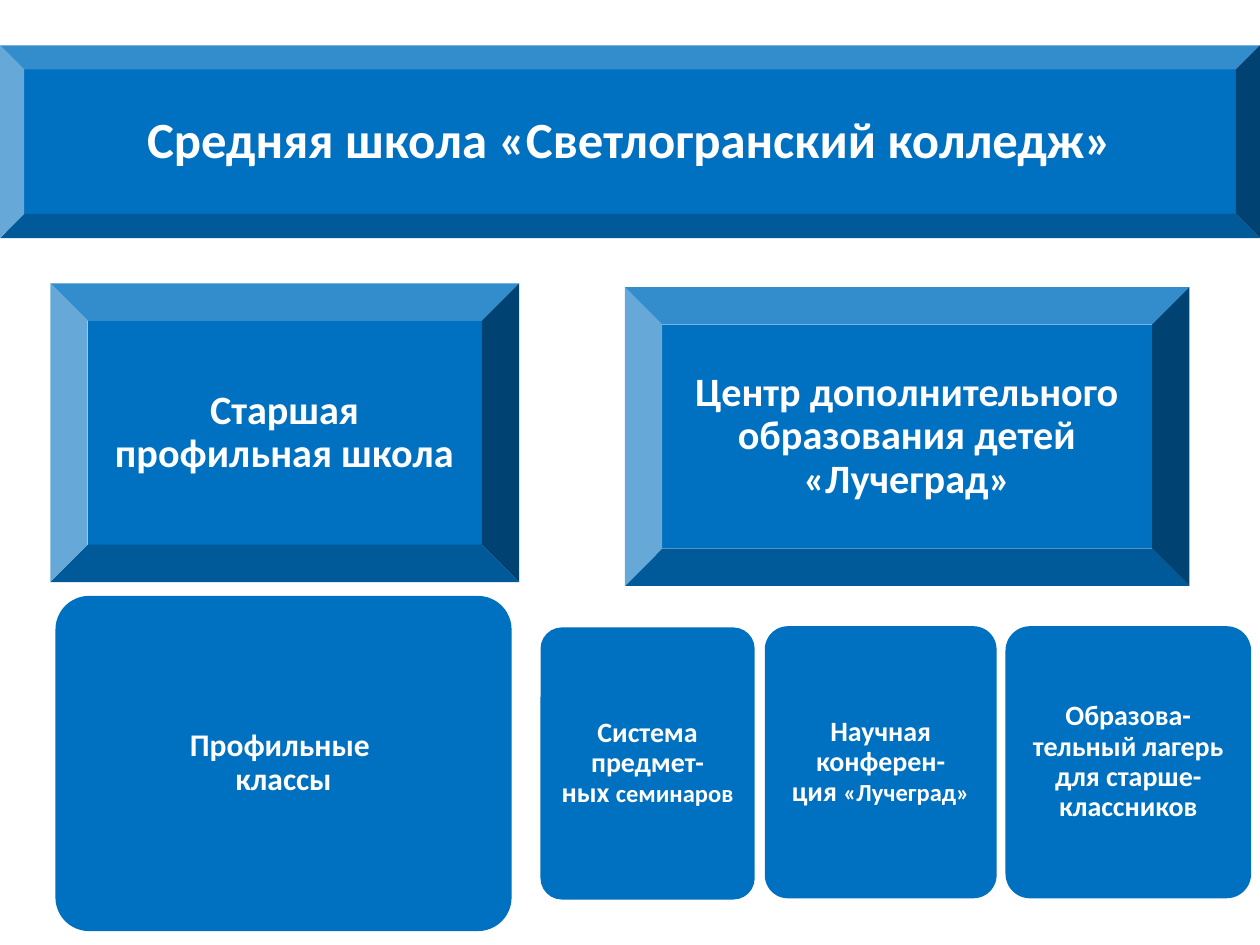
from typing import NamedTuple

import pptx
import pptx.dml.color
import pptx.enum.shapes
import pptx.enum.text
import pptx.util

Inches = pptx.util.Inches
Pt = pptx.util.Pt
MSO_SHAPE = pptx.enum.shapes.MSO_SHAPE
COLORS = {"block": "0070C0", "text": "FFFFFF"}
FONT = "Calibri"
SMALL_SIZE = 14


class Line(NamedTuple):
    text: str
    small: str = ""


class Block(NamedTuple):
    left: float
    top: float
    width: float
    height: float
    size: int
    inset: float
    lines: list[Line]


def rgb(name: str) -> pptx.dml.color.RGBColor:
    return pptx.dml.color.RGBColor.from_string(COLORS[name])


def add_line(p, line: Line, size: int) -> None:
    p.alignment = pptx.enum.text.PP_ALIGN.CENTER
    p.line_spacing = 0.9
    p.font.name = FONT
    p.font.size = Pt(size)
    p.font.bold = True
    p.font.color.rgb = rgb("text")
    p.add_run().text = line.text
    if line.small:
        r = p.add_run()
        r.text = line.small
        r.font.size = Pt(SMALL_SIZE)


def add_block(s, block: Block, kind: MSO_SHAPE, adjustment: float) -> None:
    box = (block.left, block.top, block.width, block.height)
    sp = s.shapes.add_shape(kind, *map(Inches, box))
    sp.adjustments[0] = adjustment
    sp.shadow.inherit = False
    sp.fill.solid()
    sp.fill.fore_color.rgb = rgb("block")
    sp.line.fill.background()
    tf = sp.text_frame
    tf.word_wrap = True
    tf.vertical_anchor = pptx.enum.text.MSO_ANCHOR.MIDDLE
    tf.margin_left = tf.margin_right = Inches(block.inset)
    tf.margin_top = tf.margin_bottom = Inches(block.inset)
    for i, line in enumerate(block.lines):
        p = tf.add_paragraph() if i else tf.paragraphs[0]
        add_line(p, line, block.size)


HEADINGS = [
    Block(0, 0.36, 10, 1.53, 29, 0.12,
          [Line("Средняя школа «Светлогранский колледж»")]),
    Block(0.4, 2.25, 3.72, 2.37, 23, 0.1,
          [Line("Старшая профильная школа")]),
    Block(4.96, 2.28, 4.48, 2.37, 23, 0.1,
          [Line("Центр дополнительного образования детей «Лучеград»")]),
]
UNITS = [
    Block(0.44, 4.73, 3.62, 2.66, 18, 0.07,
          [Line("Профильные "), Line("классы")]),
    Block(4.29, 4.98, 1.7, 2.16, 16, 0.07,
          [Line("Система предмет-"), Line("ных ", "семинаров")]),
    Block(6.07, 4.97, 1.84, 2.16, 16, 0.07,
          [Line("Научная конферен-"), Line("ция ", "«Лучеград»")]),
    Block(7.98, 4.97, 1.95, 2.16, 16, 0.07,
          [Line("Образова-"), Line("тельный лагерь для старше-"),
           Line("классников")]),
]


def main() -> None:
    prs = pptx.Presentation()
    prs.slide_width = Inches(10)
    prs.slide_height = Inches(7.5)
    s = prs.slides.add_slide(prs.slide_layouts[6])
    for heading in HEADINGS:
        add_block(s, heading, MSO_SHAPE.BEVEL, 0.125)
    for unit in UNITS:
        add_block(s, unit, MSO_SHAPE.ROUNDED_RECTANGLE, 0.1)
    prs.save("out.pptx")


if __name__ == "__main__":
    main()
